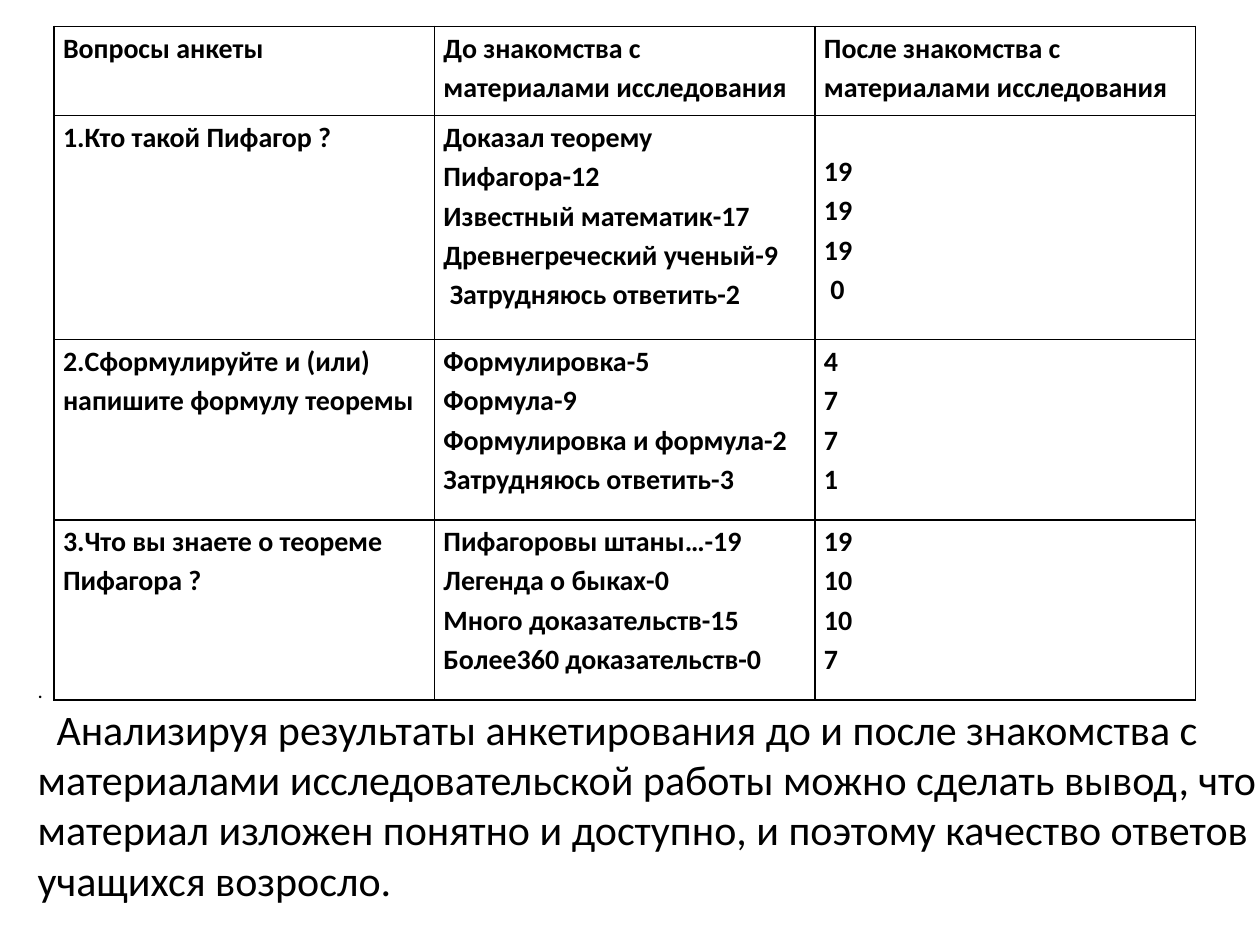
from lxml.etree import SubElement
from pptx import Presentation
from pptx.dml.color import RGBColor
from pptx.enum.text import MSO_ANCHOR as Anchor
from pptx.oxml.ns import qn
from pptx.util import Cm, Pt

COLORS = {"ink": "000000"}
HEADINGS = [
    ["Вопросы анкеты"],
    ["До знакомства с материалами исследования"],
    ["После знакомства с материалами исследования"],
]
ANSWERS = [
    [
        ["1.Кто такой Пифагор ?"],
        ["Доказал теорему Пифагора-12", "Известный математик-17",
         "Древнегреческий ученый-9", " Затрудняюсь ответить-2"],
        ["19", "19", "19", " 0"],
    ],
    [
        ["2.Сформулируйте и (или) напишите формулу теоремы"],
        ["Формулировка-5", "Формула-9", "Формулировка и формула-2", "Затрудняюсь ответить-3"],
        ["4", "7", "7", "1"],
    ],
    [
        ["3.Что вы знаете о теореме Пифагора ?"],
        ["Пифагоровы штаны…-19", "Легенда о быках-0",
         "Много доказательств-15", "Более360 доказательств-0"],
        ["19", "10", "10", "7"],
    ],
]
CONCLUSION = (
    "Анализируя результаты анкетирования до и после знакомства с материалами "
    "исследовательской работы можно сделать вывод, что материал изложен понятно и "
    "доступно, и поэтому качество ответов учащихся возросло."
)


def write(para, text, size=16, bold=False, spacing=None, indent=0, font="Calibri", color="ink"):
    span = para.add_run()
    span.text = text
    span.font.name = font
    span.font.size = Pt(size)
    span.font.bold = bold
    span.font.color.rgb = RGBColor.from_string(COLORS[color])
    if spacing:
        para.line_spacing = spacing
    if indent:
        para._p.get_or_add_pPr().set("indent", str(Cm(indent)))


def next_para(frame, index):
    return frame.add_paragraph() if index else frame.paragraphs[0]


def draw_borders(cell, width=1):
    properties = cell._tc.get_or_add_tcPr()
    for position, side in enumerate(("a:lnL", "a:lnR", "a:lnT", "a:lnB")):
        line = SubElement(properties, qn(side), w=str(Pt(width)))
        fill = SubElement(line, qn("a:solidFill"))
        SubElement(fill, qn("a:srgbClr"), val=COLORS["ink"])
        properties.remove(line)
        properties.insert(position, line)


class SurveySlide:
    """Holds the style and the slide, and adds each kind of element."""

    def __init__(self, deck):
        self.page = deck.slides.add_slide(deck.slide_layouts[6])
        self.cell_format = {"size": 16, "bold": True, "spacing": 1.15}
        self.side_margin = Cm(0.18)

    def table(self, rows, left, top, column_width, heights):
        columns = len(rows[0])
        frame = self.page.shapes.add_table(
            len(rows), columns, Cm(left), Cm(top), Cm(column_width * columns), Cm(sum(heights)))
        grid = frame.table
        grid.first_row = grid.horz_banding = False
        for column in grid.columns:
            column.width = Cm(column_width)
        for row, height, contents in zip(grid.rows, heights, rows):
            row.height = Cm(height)
            for cell, lines in zip(row.cells, contents):
                self.fill_cell(cell, lines)
        return grid

    def fill_cell(self, cell, lines):
        cell.margin_left = cell.margin_right = self.side_margin
        cell.margin_top = cell.margin_bottom = 0
        cell.fill.background()
        draw_borders(cell)
        for index, line in enumerate(lines):
            write(next_para(cell.text_frame, index), line, **self.cell_format)

    def text_box(self, paragraphs, left, top, width, height):
        box = self.page.shapes.add_textbox(Cm(left), Cm(top), Cm(width), Cm(height))
        frame = box.text_frame
        frame.word_wrap = True
        frame.vertical_anchor = Anchor.TOP
        frame.margin_right = 0
        for index, (text, style) in enumerate(paragraphs):
            write(next_para(frame, index), text, **style)


def main():
    deck = Presentation()
    deck.slide_width, deck.slide_height = Cm(25.4), Cm(19.05)
    survey = SurveySlide(deck)
    grid = survey.table([HEADINGS, *ANSWERS], left=1.09, top=0.53,
                        column_width=7.67, heights=[1.8, 4.52, 3.63, 3.63])
    grid.cell(1, 2).margin_top = Cm(0.69)
    survey.text_box(
        [(".", {"size": 12}), (CONCLUSION, {"size": 24, "indent": 0.38})],
        left=0.51, top=13.54, width=24.89, height=4.9)
    deck.save("out.pptx")


if __name__ == "__main__":
    main()
